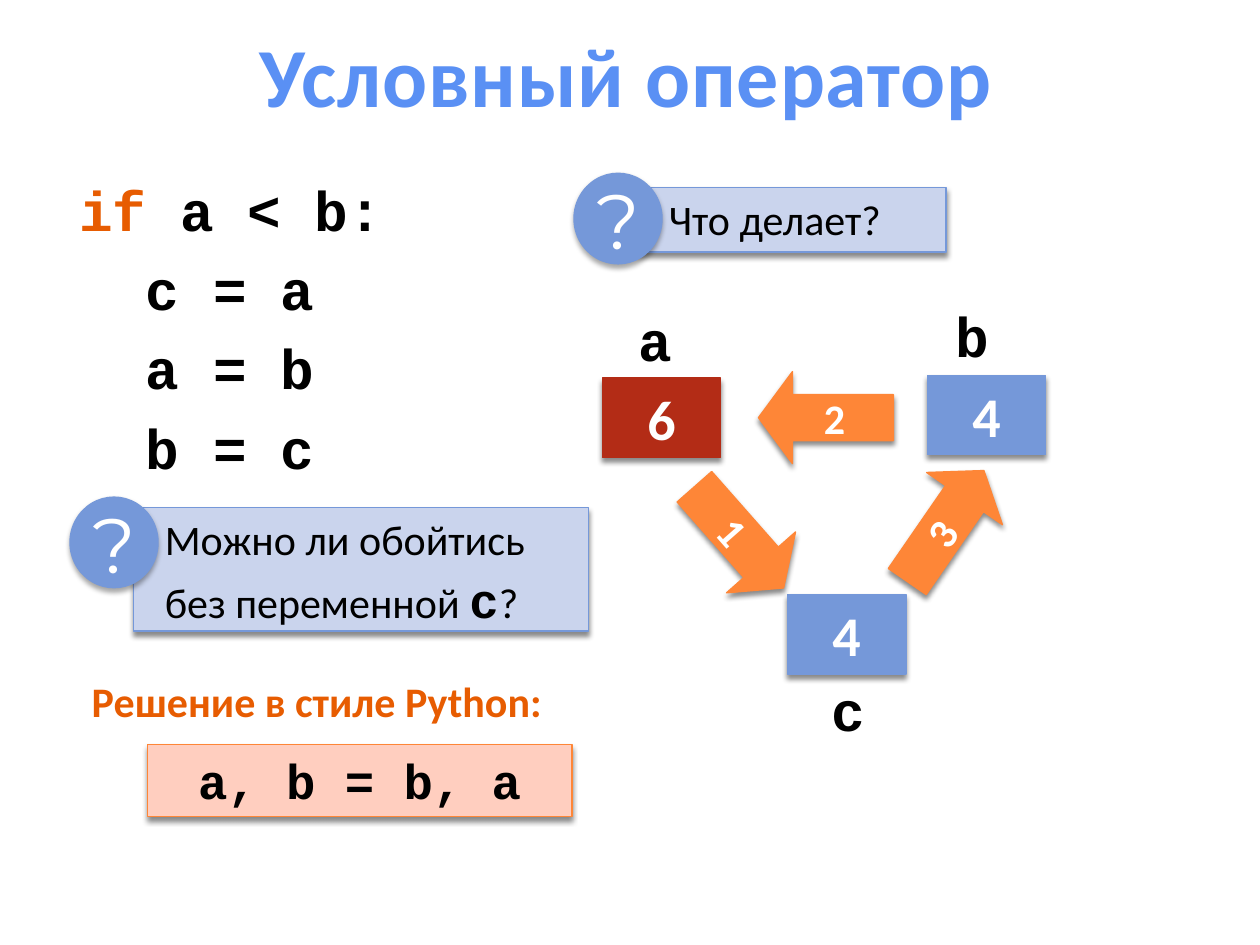
from lxml.etree import SubElement
from pptx import Presentation
from pptx.dml.color import RGBColor
from pptx.enum.shapes import MSO_SHAPE
from pptx.enum.text import MSO_ANCHOR, PP_ALIGN
from pptx.oxml.ns import qn
from pptx.util import Inches, Pt

BLACK = RGBColor(0x00, 0x00, 0x00)
WHITE = RGBColor(0xFF, 0xFF, 0xFF)
BLUE = RGBColor(0x75, 0x98, 0xD9)
PALE_BLUE = RGBColor(0xCA, 0xD4, 0xED)
TITLE_BLUE = RGBColor(0x5A, 0x90, 0xF4)
RED = RGBColor(0xB3, 0x2C, 0x16)
ORANGE = RGBColor(0xFE, 0x86, 0x37)
DARK_ORANGE = RGBColor(0xE7, 0x5C, 0x01)
PEACH = RGBColor(0xFF, 0xCE, 0xBF)
SANS, MONO, ROUND = "Calibri", "Courier New", "Montserrat"

prs = Presentation()
prs.slide_width, prs.slide_height = Inches(10), Inches(7.5)
s = prs.slides.add_slide(prs.slide_layouts[6])


def add_box(shapes, at, kind=None, fill=None, line=None):
    """Add a text box, or a filled shape with a soft shadow below it."""
    at = [Inches(v) for v in at]
    if kind is None:
        return shapes.add_textbox(*at)
    sp = shapes.add_shape(kind, *at)
    sp.fill.solid()
    sp.fill.fore_color.rgb = fill
    if line is None:
        sp.line.fill.background()
    else:
        sp.line.color.rgb = line
        sp.line.width = Pt(0.79)
    sp.shadow.inherit = False
    effects = sp._element.spPr.find(qn("a:effectLst"))
    shadow = SubElement(effects, qn("a:outerShdw"), blurRad=str(Pt(3)),
                        dist=str(Pt(2.4 if line else 2)), dir="5400000",
                        rotWithShape="0")
    color = SubElement(shadow, qn("a:srgbClr"), val="000000")
    SubElement(color, qn("a:alpha"), val="45000" if line else "35000")
    return sp


def write(sp, lines, align=PP_ALIGN.CENTER, anchor=MSO_ANCHOR.MIDDLE, wrap=False):
    """Fill a shape; a line is (indent, space before, runs)."""
    tf = sp.text_frame
    tf.word_wrap, tf.vertical_anchor = wrap, anchor
    for i, (indent, before, runs) in enumerate(lines):
        p = tf.add_paragraph() if i else tf.paragraphs[0]
        p.alignment, p.space_before = align, Pt(before)
        if indent:
            p._p.get_or_add_pPr().set("marL", str(Inches(indent)))
        for text, size, font, color, bold in runs:
            r = p.add_run()
            r.text = text
            r.font.size, r.font.name, r.font.bold = Pt(size), font, bold
            r.font.color.rgb = color


# Title
sp = add_box(s.shapes, (0.39, 0.16, 9.16, 0.85))
write(sp, [(0, 0, [("Условный оператор", 48, SANS, TITLE_BLUE, True)])], wrap=True)
sp.text_frame.paragraphs[0].runs[0].font._element.set("spc", "50")

# Code listing, body indented by two characters
code = [(0, 7, [("if", 32, MONO, DARK_ORANGE, True), (" a < b:", 32, MONO, BLACK, True)])]
for text in ("с = a", "a = b", "b = c"):
    code.append((0.53, 7, [(text, 32, MONO, BLACK, True)]))
sp = add_box(s.shapes, (0.53, 1.34, 3.68, 2.5))
write(sp, code, PP_ALIGN.LEFT, MSO_ANCHOR.TOP, True)

# Questions: a panel with a round question mark on its corner
what = [(0.15, 0, [("Что делает?", 24, SANS, BLACK, False)])]
without = [
    (0.15, 0, [("Можно ли обойтись", 24, SANS, BLACK, False)]),
    (0.15, 3, [("без переменной ", 24, SANS, BLACK, False),
               ("c", 28, MONO, BLACK, True),
               ("?", 24, SANS, BLACK, False)]),
]
for panel, (x, y), lines in [
    ((5.06, 1.49, 2.45, 0.51), (4.55, 1.37), what),
    ((1.06, 4.03, 3.61, 0.98), (0.55, 3.94), without),
]:
    group = s.shapes.add_group_shape().shapes
    sp = add_box(group, panel, MSO_SHAPE.RECTANGLE, PALE_BLUE, BLUE)
    write(sp, lines, PP_ALIGN.LEFT, MSO_ANCHOR.TOP, True)
    sp = add_box(group, (x, y, 0.71, 0.73), MSO_SHAPE.OVAL, BLUE)
    write(sp, [(0, 0, [("?", 44, ROUND, WHITE, False)])])

# Variables: value cells and their names
for value, x, y, color, name, name_x, name_y in [
    ("6", 4.78, 3, RED, "a", 4.94, 2.41),
    ("4", 7.36, 2.98, BLUE, "b", 7.46, 2.38),
    ("4", 6.25, 4.72, BLUE, "c", 6.47, 5.35),
]:
    sp = add_box(s.shapes, (x, y, 0.94, 0.63), MSO_SHAPE.RECTANGLE, color, color)
    write(sp, [(0, 0, [(value, 32, SANS, WHITE, True)])])
    sp = add_box(s.shapes, (name_x, name_y, 0.52, 0.56))
    write(sp, [(0, 0, [(name, 32, MONO, BLACK, True)])])

# Numbered arrows of the swap
for step, x, y, kind, angle in [
    ("1", 5.33, 3.9, MSO_SHAPE.RIGHT_ARROW, 48.6),
    ("2", 6.02, 2.95, MSO_SHAPE.LEFT_ARROW, 0),
    ("3", 6.97, 3.81, MSO_SHAPE.RIGHT_ARROW, 304.6),
]:
    sp = add_box(s.shapes, (x, y, 1.07, 0.73), kind, ORANGE, ORANGE)
    sp.adjustments[1] = 0.37
    sp.rotation = angle
    write(sp, [(0, 0, [(step, 24, SANS, WHITE, True)])])

# Python-style solution
sp = add_box(s.shapes, (0.63, 5.31, 3.9, 0.5))
write(sp, [(0, 0, [("Решение в стиле Python:", 24, SANS, DARK_ORANGE, True)])],
      PP_ALIGN.LEFT, MSO_ANCHOR.TOP)
sp = add_box(s.shapes, (1.17, 5.91, 3.37, 0.57), MSO_SHAPE.RECTANGLE, PEACH, ORANGE)
write(sp, [(0, 6, [("a, b = b, a", 28, MONO, BLACK, True)])],
      anchor=MSO_ANCHOR.TOP, wrap=True)

prs.save("out.pptx")
